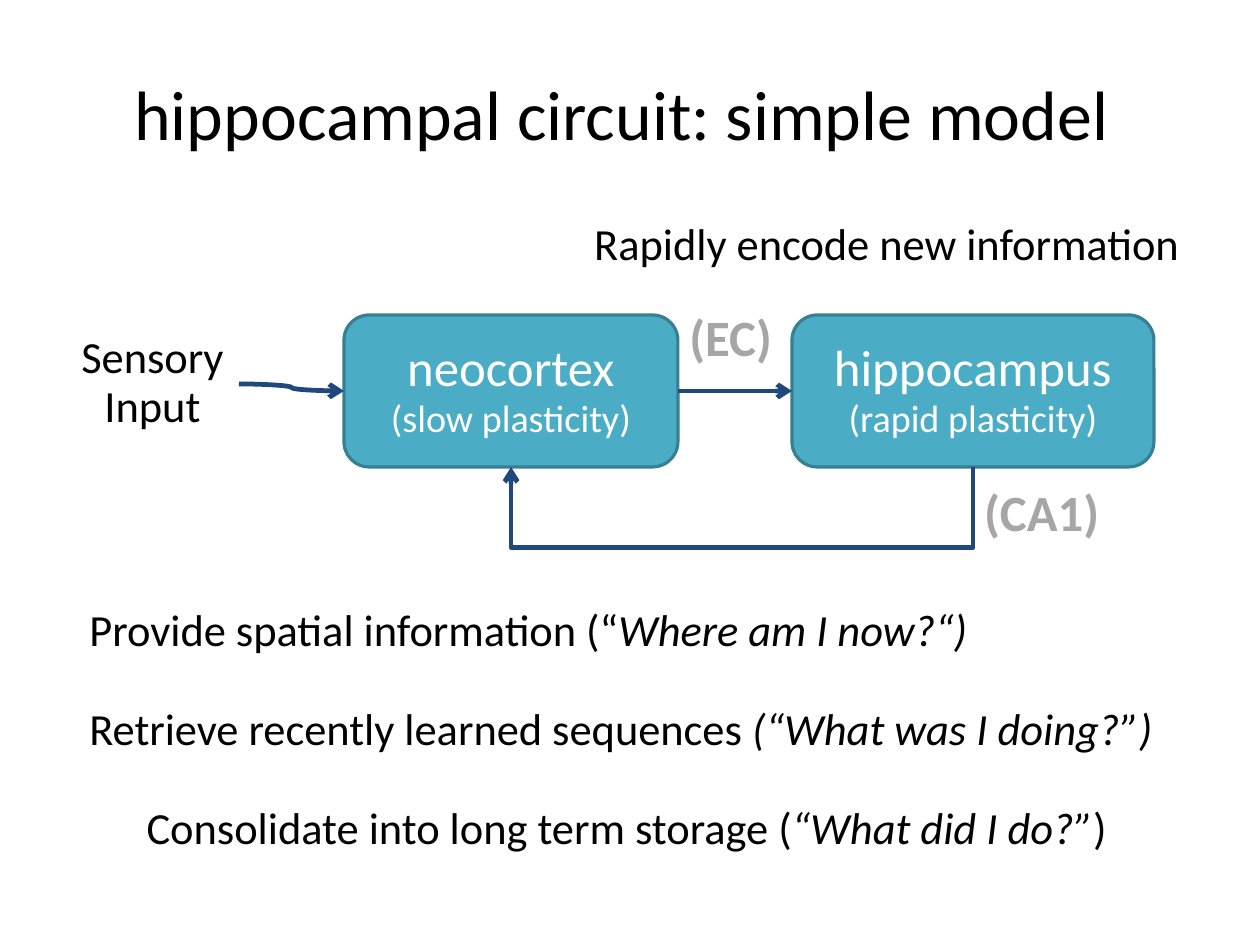
from dataclasses import dataclass

import lxml.etree
import pptx
import pptx.dml.color
import pptx.enum.shapes
import pptx.enum.text
import pptx.oxml.ns
import pptx.util

EMU_PER_PX = 8000
FONT = "Calibri"
BLACK, WHITE, GREY = "000000", "FFFFFF", "A6A6A6"
BOX_FILL, BOX_LINE, ARROW = "4BACC6", "377F92", "1F497D"
LINE_SPACING = 0.93
HAIRLINE_EMU = 1588
RETURN_ADJUST = 44701800
TOP, LEFT, BOTTOM, RIGHT = range(4)
ALIGN = pptx.enum.text.PP_ALIGN
ANCHOR = pptx.enum.text.MSO_ANCHOR
AUTO_SIZE = pptx.enum.text.MSO_AUTO_SIZE
CONNECTOR = pptx.enum.shapes.MSO_CONNECTOR


@dataclass(frozen=True)
class Run:
    text: str
    size: int = 28
    color: str = BLACK
    bold: bool = False
    italic: bool = False


@dataclass(frozen=True)
class Label:
    bounds: tuple[int, int, int, int]
    lines: tuple[Run, ...]
    alignment: ALIGN = ALIGN.LEFT


@dataclass(frozen=True)
class Region:
    bounds: tuple[int, int, int, int]
    name: str
    plasticity: str


SENSORY = Label((66, 328, 173, 112), (Run("Sensory"), Run("Input")), ALIGN.CENTER)
LABELS = (
    Label((973, 480, 144, 69), (Run("(CA1)", 32, GREY, bold=True),)),
    Label((678, 306, 111, 69), (Run("(EC)", 32, GREY, bold=True),)),
    Label((583, 215, 631, 62), (Run("Rapidly encode new information"),)),
)
NEOCORTEX = Region((344, 315, 334, 152), "neocortex", "(slow plasticity)")
HIPPOCAMPUS = Region((792, 315, 362, 152), "hippocampus", "(rapid plasticity)")
FUNCTIONS = (
    (Run("Provide spatial information (“"), Run("Where am I now?“)", italic=True)),
    (Run("Retrieve recently learned sequences "), Run("(“What was I doing?”)", italic=True)),
    (Run("Consolidate into long term storage ("), Run("“What did I do?”", italic=True), Run(")")),
)


def px(length: int) -> int:
    return pptx.util.Emu(length * EMU_PER_PX)


def rgb(color: str) -> pptx.dml.color.RGBColor:
    return pptx.dml.color.RGBColor.from_string(color)


def apply(target, **values) -> None:
    for name, value in values.items():
        setattr(target, name, value)


def place(shape, bounds: tuple[int, int, int, int]) -> None:
    apply(shape, **dict(zip(("left", "top", "width", "height"), map(px, bounds))))


def add_child(parent, tag: str, **attributes: str):
    return lxml.etree.SubElement(parent, pptx.oxml.ns.qn(tag), attributes)


def write(frame, paragraphs, alignment, gap: int = 0) -> None:
    for index, runs in enumerate(paragraphs):
        paragraph = frame.add_paragraph() if index else frame.paragraphs[0]
        apply(
            paragraph,
            alignment=alignment,
            line_spacing=LINE_SPACING,
            space_before=pptx.util.Pt(gap if index else 0),
        )
        for item in runs:
            run = paragraph.add_run()
            run.text = item.text
            apply(
                run.font,
                name=FONT,
                size=pptx.util.Pt(item.size),
                bold=item.bold,
                italic=item.italic,
            )
            run.font.color.rgb = rgb(item.color)


def add_title(slide) -> None:
    title = slide.shapes.title
    place(title, (63, 38, 1134, 158))
    apply(
        title.text_frame,
        margin_left=0,
        margin_top=0,
        margin_right=0,
        margin_bottom=0,
        vertical_anchor=ANCHOR.MIDDLE,
    )
    write(title.text_frame, [(Run("hippocampal circuit: simple model ", 44),)], ALIGN.CENTER)


def add_functions(slide) -> None:
    body = slide.placeholders[1]
    place(body, (78, 601, 1114, 262))
    apply(body.text_frame, auto_size=AUTO_SIZE.SHAPE_TO_FIT_TEXT, vertical_anchor=ANCHOR.TOP)
    write(body.text_frame, FUNCTIONS, ALIGN.LEFT, gap=31)
    half_inch = pptx.util.Inches(0.5)
    for paragraph, indent in zip(body.text_frame.paragraphs, (-half_inch, -half_inch, 0)):
        properties = paragraph.runs[0].font and paragraph._p.get_or_add_pPr()
        properties.set("marL", str(half_inch))
        properties.set("indent", str(indent))
        add_child(properties, "a:buNone")


def add_label(slide, label: Label):
    shape = slide.shapes.add_textbox(*map(px, label.bounds))
    apply(shape.text_frame, word_wrap=False, auto_size=AUTO_SIZE.SHAPE_TO_FIT_TEXT)
    write(shape.text_frame, [(line,) for line in label.lines], label.alignment)
    return shape


def add_region(slide, region: Region):
    shape = slide.shapes.add_shape(
        pptx.enum.shapes.MSO_SHAPE.ROUNDED_RECTANGLE, *map(px, region.bounds)
    )
    shape.shadow.inherit = False
    shape.fill.solid()
    shape.fill.fore_color.rgb = rgb(BOX_FILL)
    shape.line.color.rgb = rgb(BOX_LINE)
    shape.line.width = pptx.util.Pt(2)
    apply(shape.text_frame, word_wrap=True, vertical_anchor=ANCHOR.MIDDLE)
    lines = [(Run(region.name, 32, WHITE),), (Run(region.plasticity, 24, WHITE),)]
    write(shape.text_frame, lines, ALIGN.CENTER)
    return shape


def add_arrow(slide, kind, source, source_side: int, target, target_side: int):
    connector = slide.shapes.add_connector(kind, 0, 0, 0, 0)
    connector.begin_connect(source, source_side)
    connector.end_connect(target, target_side)
    connector.line.color.rgb = rgb(ARROW)
    connector.line.width = pptx.util.Pt(3)
    add_child(connector.line._get_or_add_ln(), "a:tailEnd", type="arrow")
    add_child(connector.element.spPr, "a:effectLst")
    return connector


def add_return_arrow(slide, source, target) -> None:
    connector = add_arrow(slide, CONNECTOR.ELBOW, source, BOTTOM, target, BOTTOM)
    start = source.left + source.width // 2
    end = target.left + target.width // 2
    span = start - end
    properties = connector.element.spPr
    transform = properties.find(pptx.oxml.ns.qn("a:xfrm"))
    for flip in ("flipH", "flipV"):
        transform.attrib.pop(flip, None)
    transform.set("rot", "5400000")
    apply(
        connector,
        left=(start + end) // 2,
        top=source.top + source.height - span // 2,
        width=HAIRLINE_EMU,
        height=span,
    )
    adjustments = properties.find(".//" + pptx.oxml.ns.qn("a:avLst"))
    add_child(adjustments, "a:gd", name="adj1", fmla=f"val {RETURN_ADJUST}")


def main() -> None:
    presentation = pptx.Presentation()
    apply(presentation, slide_width=px(1260), slide_height=px(945))
    slide = presentation.slides.add_slide(presentation.slide_layouts[1])
    add_title(slide)
    sensory = add_label(slide, SENSORY)
    hippocampus = add_region(slide, HIPPOCAMPUS)
    neocortex = add_region(slide, NEOCORTEX)
    add_arrow(slide, CONNECTOR.STRAIGHT, neocortex, RIGHT, hippocampus, LEFT)
    add_arrow(slide, CONNECTOR.CURVE, sensory, RIGHT, neocortex, LEFT)
    add_return_arrow(slide, hippocampus, neocortex)
    add_functions(slide)
    for label in LABELS:
        add_label(slide, label)
    presentation.save("out.pptx")


if __name__ == "__main__":
    main()
